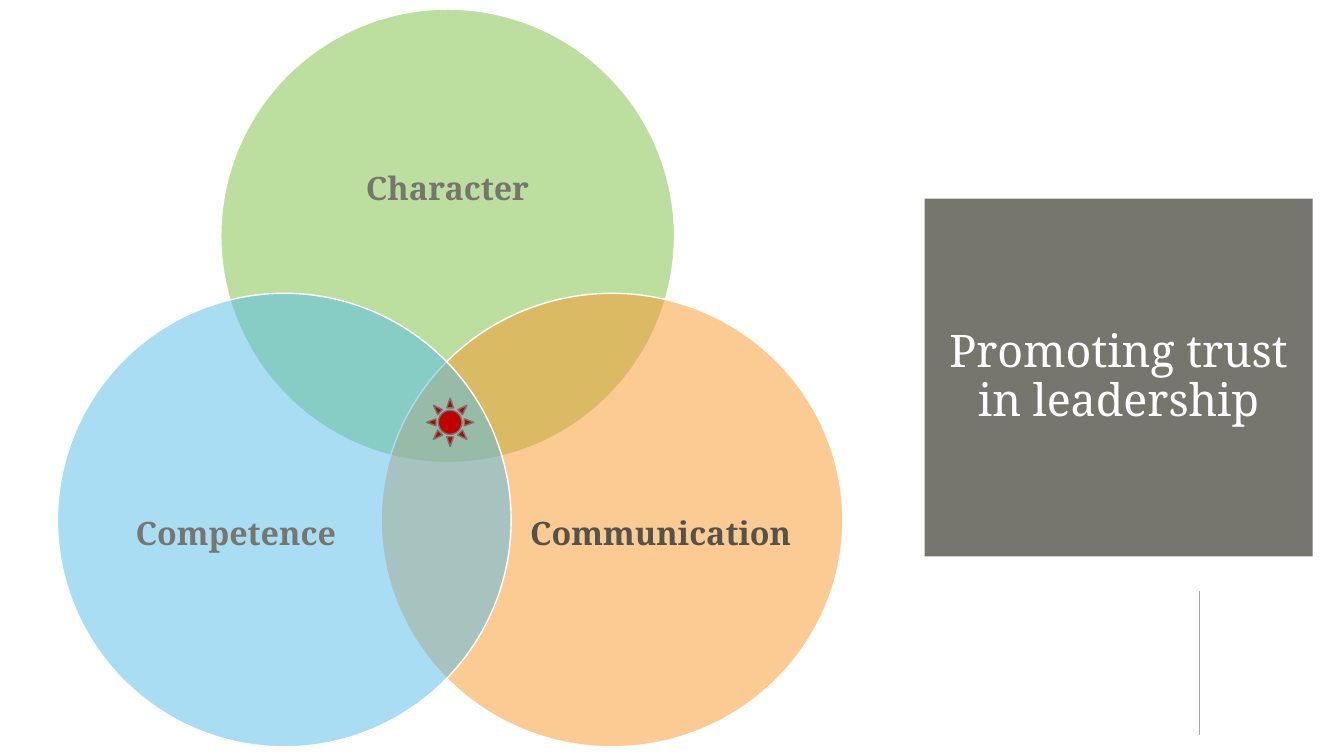
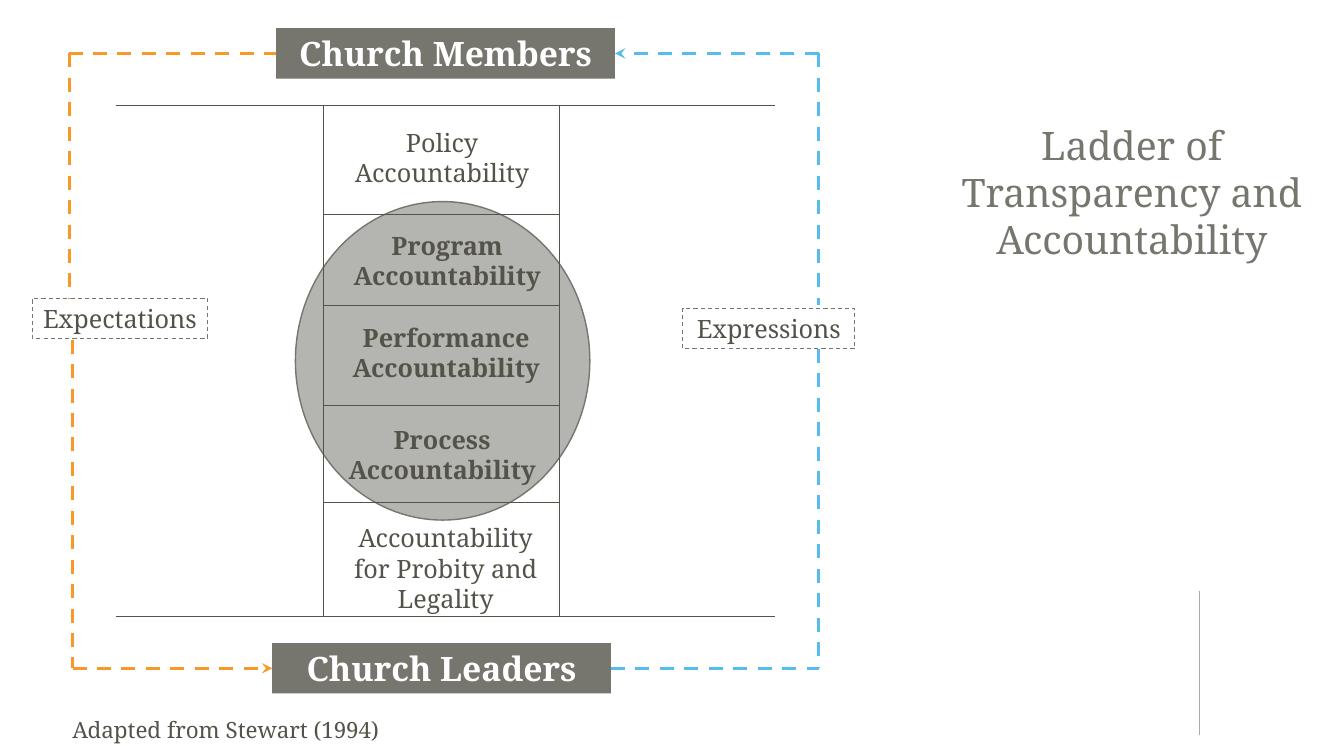
"""Build two slides on trust, transparency and accountability in leadership."""
from lxml import etree
from pptx import Presentation
from pptx.dml.color import RGBColor
from pptx.enum.dml import MSO_LINE
from pptx.enum.shapes import MSO_CONNECTOR, MSO_SHAPE as SHAPE
from pptx.enum.text import MSO_ANCHOR, PP_ALIGN
from pptx.oxml.ns import qn
from pptx.util import Inches, Pt

FONT = "Noto Serif"
WHITE = RGBColor(0xFF, 0xFF, 0xFF)
STONE = RGBColor(0x76, 0x75, 0x6E)
DARK = RGBColor(0x54, 0x53, 0x49)
PALE_STONE = RGBColor(0xB4, 0xB4, 0xB0)
RULE_GREY = RGBColor(0xA9, 0xA9, 0xA5)
GREEN = RGBColor(0x7B, 0xC1, 0x43)
ORANGE = RGBColor(0xF8, 0x98, 0x28)
BLUE = RGBColor(0x55, 0xBC, 0xEB)
RED = RGBColor(0xC0, 0x00, 0x00)


def write(shape, text, size, color, bold=False, spacing=1.0, inset=None):
    frame = shape.text_frame
    frame.word_wrap = True
    frame.vertical_anchor = MSO_ANCHOR.MIDDLE
    if inset is not None:
        frame.margin_left = frame.margin_right = Inches(inset)
        frame.margin_top = frame.margin_bottom = Inches(inset)
    frame.text = text
    paragraph = frame.paragraphs[0]
    paragraph.alignment = PP_ALIGN.CENTER
    paragraph.line_spacing = spacing
    font = paragraph.runs[0].font
    font.name, font.size, font.bold = FONT, Pt(size), bold
    font.color.rgb = color


def add_label(slide, box, text, size, color, **style):
    label = slide.shapes.add_textbox(*map(Inches, box))
    write(label, text, size, color, **style)


def add_figure(slide, kind, box, fill=None, line=None, width=1, alpha=None):
    figure = slide.shapes.add_shape(kind, *map(Inches, box))
    figure.shadow.inherit = False
    if fill is None:
        figure.fill.background()
    else:
        figure.fill.solid()
        figure.fill.fore_color.rgb = fill
    if alpha is not None:
        color = figure.fill._xPr.find(".//" + qn("a:srgbClr"))
        etree.SubElement(color, qn("a:alpha")).set("val", str(alpha * 1000))
    if line is None:
        figure.line.fill.background()
    else:
        figure.line.color.rgb = line
        figure.line.width = Pt(width)
    return figure


def add_line(slide, start, end, color=DARK, width=0.5):
    line = slide.shapes.add_connector(MSO_CONNECTOR.STRAIGHT, *map(Inches, start + end))
    line.line.color.rgb = color
    line.line.width = Pt(width)
    etree.SubElement(line._element.spPr, qn("a:effectLst"))
    return line


def add_flow(slide, start, end, color, source=None, target=None, arrow=False):
    flow = add_line(slide, start, end, color, 2.5)
    flow.line.dash_style = MSO_LINE.DASH
    if source:
        flow.begin_connect(*source)
    if target:
        flow.end_connect(*target)
    if arrow:
        outline = flow.line._get_or_add_ln()
        etree.SubElement(outline, qn("a:tailEnd")).set("type", "stealth")


def add_slide(deck):
    slide = deck.slides.add_slide(deck.slide_layouts[6])
    add_line(slide, (11.9, 5.86), (11.9, 7.29), RULE_GREY)
    return slide


def add_title(slide, box, text, size, color, fill, **style):
    title = add_figure(slide, SHAPE.RECTANGLE, box, fill)
    write(title, text, size, color, **style)


def build_trust(deck):
    slide = add_slide(deck)
    add_title(slide, (9.17, 1.97, 3.85, 3.55), "Promoting trust in leadership",
              32, WHITE, STONE, spacing=0.9)
    qualities = [
        ("Character", (2.19, 0.09, 4.5, 4.5), GREEN, (2.79, 0.88, 3.3, 2.02), STONE),
        ("Communication", (3.78, 2.91, 4.58, 4.5), ORANGE, (5.18, 4.07, 2.75, 2.48), DARK),
        ("Competence", (0.57, 2.91, 4.5, 4.5), BLUE, (0.99, 4.07, 2.7, 2.48), STONE),
    ]
    for name, circle, fill, label, color in qualities:
        add_figure(slide, SHAPE.OVAL, circle, fill, WHITE, alpha=50)
        add_label(slide, label, name, 23, color, bold=True, spacing=0.9, inset=0)
    add_figure(slide, SHAPE.SUN, (4.23, 3.95, 0.47, 0.48), RED, STONE)


def add_ladder(slide):
    left, right, top, bottom = 3.21, 5.55, 1.05, 6.11
    add_figure(slide, SHAPE.OVAL, (2.93, 2, 2.92, 3.16), PALE_STONE, STONE)
    for rail in (left, right):
        add_line(slide, (rail, top), (rail, bottom))
    for limit in (top, bottom):
        add_line(slide, (1.15, limit), (7.69, limit))
    for rung in (2.13, 3.03, 4.02, 4.98):
        add_line(slide, (left, rung), (right, rung))
    steps = [
        ("Policy Accountability", (3.33, 1.21, 2.11, 0.71), False),
        ("Program Accountability", (3.38, 2.23, 2.11, 0.71), True),
        ("Performance Accountability", (3.37, 3.14, 2.11, 0.71), True),
        ("Process Accountability", (3.33, 4.15, 2.11, 0.71), True),
        ("Accountability for Probity and Legality", (3.39, 5.13, 2.06, 1.01), False),
    ]
    for text, box, bold in steps:
        add_label(slide, box, text, 18, DARK, bold=bold)


def add_group(slide, left, top, text):
    group = add_figure(slide, SHAPE.RECTANGLE, (left, top, 3.36, 0.5), STONE)
    write(group, text, 24, WHITE, bold=True)
    return group


def add_exchange(slide, box, text):
    exchange = add_figure(slide, SHAPE.RECTANGLE, box, line=STONE, width=0.75)
    exchange.line.dash_style = MSO_LINE.DASH
    write(exchange, text, 18, DARK)


def build_accountability(deck):
    slide = add_slide(deck)
    add_ladder(slide)
    members = add_group(slide, 2.74, 0.28, "Church Members")
    leaders = add_group(slide, 2.7, 6.38, "Church Leaders")
    add_exchange(slide, (0.32, 2.96, 1.74, 0.4), "Expectations")
    add_exchange(slide, (6.77, 3.06, 1.71, 0.4), "Expressions")

    high, low, outer = 0.53, 6.63, 8.12
    add_flow(slide, (0.68, high), (2.74, high), ORANGE, target=(members, 1))
    add_flow(slide, (0.69, high), (0.69, 2.96), ORANGE)
    add_flow(slide, (0.72, 3.37), (0.72, low), ORANGE)
    add_flow(slide, (0.72, low), (2.7, low), ORANGE, target=(leaders, 1), arrow=True)
    add_flow(slide, (6.06, low), (outer, low), BLUE, source=(leaders, 3))
    add_flow(slide, (outer, 3.46), (outer, low), BLUE)
    add_flow(slide, (outer, high), (outer, 3.03), BLUE)
    add_flow(slide, (outer, high), (6.1, high), BLUE, target=(members, 3), arrow=True)

    add_label(slide, (0.56, 7.05, 3.36, 0.37), "Adapted from Stewart (1994)", 16, DARK)
    add_title(slide, (9.42, 1.15, 3.61, 1.51),
              "Ladder of Transparency and Accountability", 28, STONE, WHITE)


def main():
    deck = Presentation()
    deck.slide_width, deck.slide_height = Inches(13.33), Inches(7.5)
    build_trust(deck)
    build_accountability(deck)
    deck.save("out.pptx")


if __name__ == "__main__":
    main()
